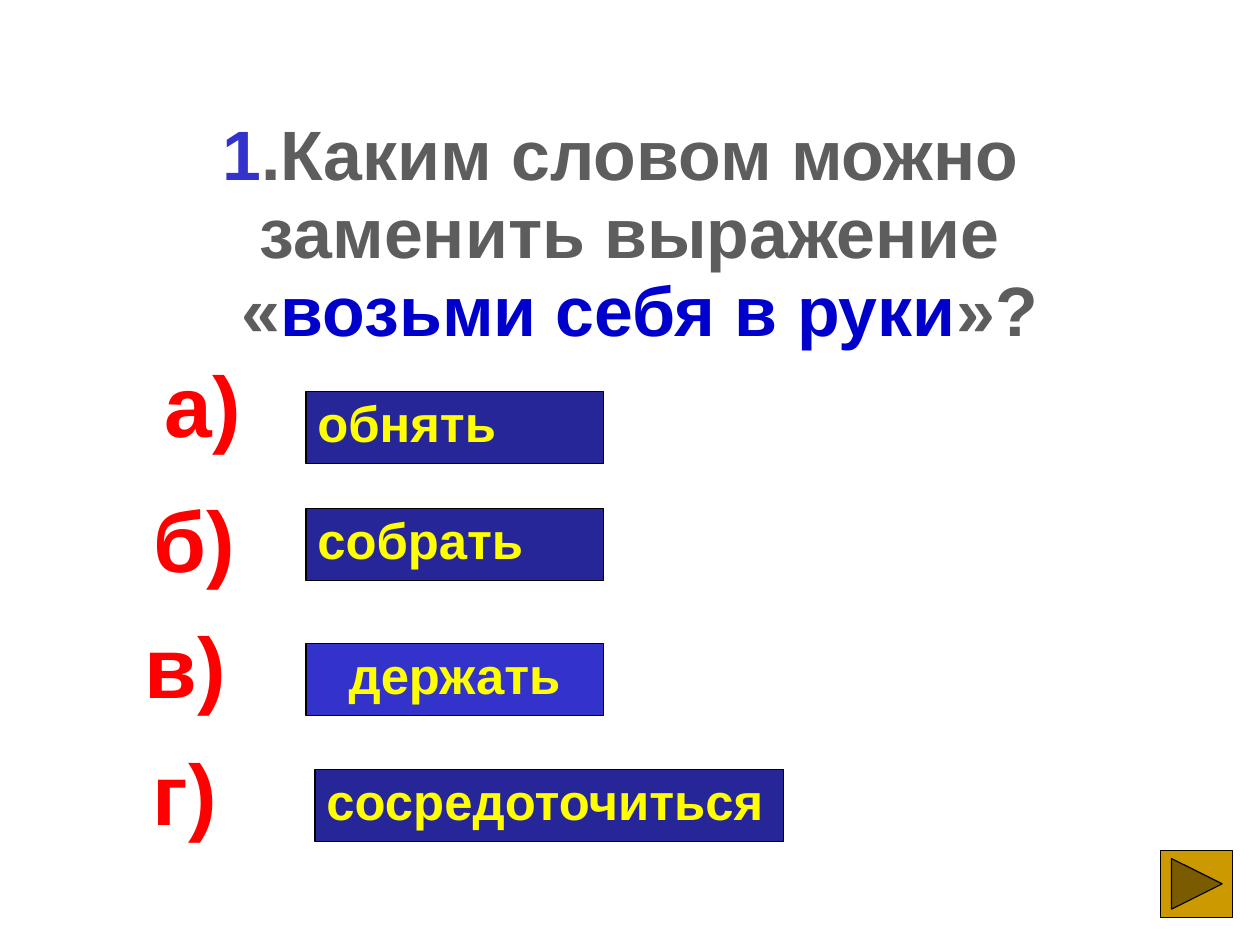
from pptx import Presentation
from pptx.dml.color import RGBColor
from pptx.enum.shapes import MSO_SHAPE
from pptx.enum.text import MSO_ANCHOR, PP_ALIGN
from pptx.util import Pt

RECTANGLE = MSO_SHAPE.RECTANGLE
FORWARD = MSO_SHAPE.ACTION_BUTTON_FORWARD_OR_NEXT
TOP = MSO_ANCHOR.TOP
MIDDLE = MSO_ANCHOR.MIDDLE
LEFT = PP_ALIGN.LEFT
CENTER = PP_ALIGN.CENTER

BLACK = RGBColor(0x00, 0x00, 0x00)
GREY = RGBColor(0x5D, 0x5D, 0x5D)
BLUE = RGBColor(0x33, 0x33, 0xCC)
PHRASE_BLUE = RGBColor(0x00, 0x00, 0xCC)
NAVY = RGBColor(0x26, 0x26, 0x99)
RED = RGBColor(0xFF, 0x00, 0x00)
YELLOW = RGBColor(0xFF, 0xFF, 0x00)
GOLD = RGBColor(0xCC, 0x99, 0x00)

QUESTION = [
    [("1", BLUE), (".Каким словом можно ", GREY)],
    [("заменить выражение", GREY)],
    [(" «", GREY), ("возьми себя в руки", PHRASE_BLUE), ("»?", GREY)],
]
ANSWERS = [
    ("а)", (96.2, 223.5, 63.4, 68.4), "обнять", (192.8, 246.7, 187.2, 45.4), NAVY, LEFT),
    ("б)", (89.3, 308.6, 66.2, 68.4), "собрать", (192.8, 320.4, 187.2, 45.4), NAVY, LEFT),
    ("в)", (83.5, 387.7, 66.2, 68.4), "держать", (192.8, 405.4, 187.2, 45.4), BLUE, CENTER),
    ("г)", (88.6, 467.6, 55.4, 68.4), "сосредоточиться", (198.5, 484.6, 295.2, 45.4), NAVY, LEFT),
]


def write_line(para, spans, size, align):
    para.alignment = align
    para.line_spacing = 0.93
    for text, color in spans:
        span = para.add_run()
        span.text = text
        span.font.name = "Arial"
        span.font.size = Pt(size)
        span.font.bold = True
        span.font.color.rgb = color


def add_text(page, area, lines, size):
    frame = page.shapes.add_textbox(*map(Pt, area)).text_frame
    frame.word_wrap = False
    frame.vertical_anchor = MIDDLE
    for index, spans in enumerate(lines):
        para = frame.add_paragraph() if index else frame.paragraphs[0]
        write_line(para, spans, size, CENTER)


def add_block(page, area, kind, fill):
    block = page.shapes.add_shape(kind, *map(Pt, area))
    block.shadow.inherit = False
    block.fill.solid()
    block.fill.fore_color.rgb = fill
    block.line.color.rgb = BLACK
    block.line.width = Pt(0.75)
    return block


def add_answer(page, letter, letter_area, word, word_area, fill, align):
    add_text(page, letter_area, [[(letter, RED)]], 54)
    frame = add_block(page, word_area, RECTANGLE, fill).text_frame
    frame.vertical_anchor = TOP
    write_line(frame.paragraphs[0], [(word, YELLOW)], 32, align)


def main():
    deck = Presentation()
    deck.slide_width = Pt(793.75)
    deck.slide_height = Pt(595.25)
    page = deck.slides.add_slide(deck.slide_layouts[6])
    add_text(page, (130.3, 70, 533.5, 156.2), QUESTION, 44)
    for answer in ANSWERS:
        add_answer(page, *answer)
    add_block(page, (731.3, 535.5, 45.4, 42.5), FORWARD, GOLD)
    deck.save("out.pptx")


if __name__ == "__main__":
    main()
